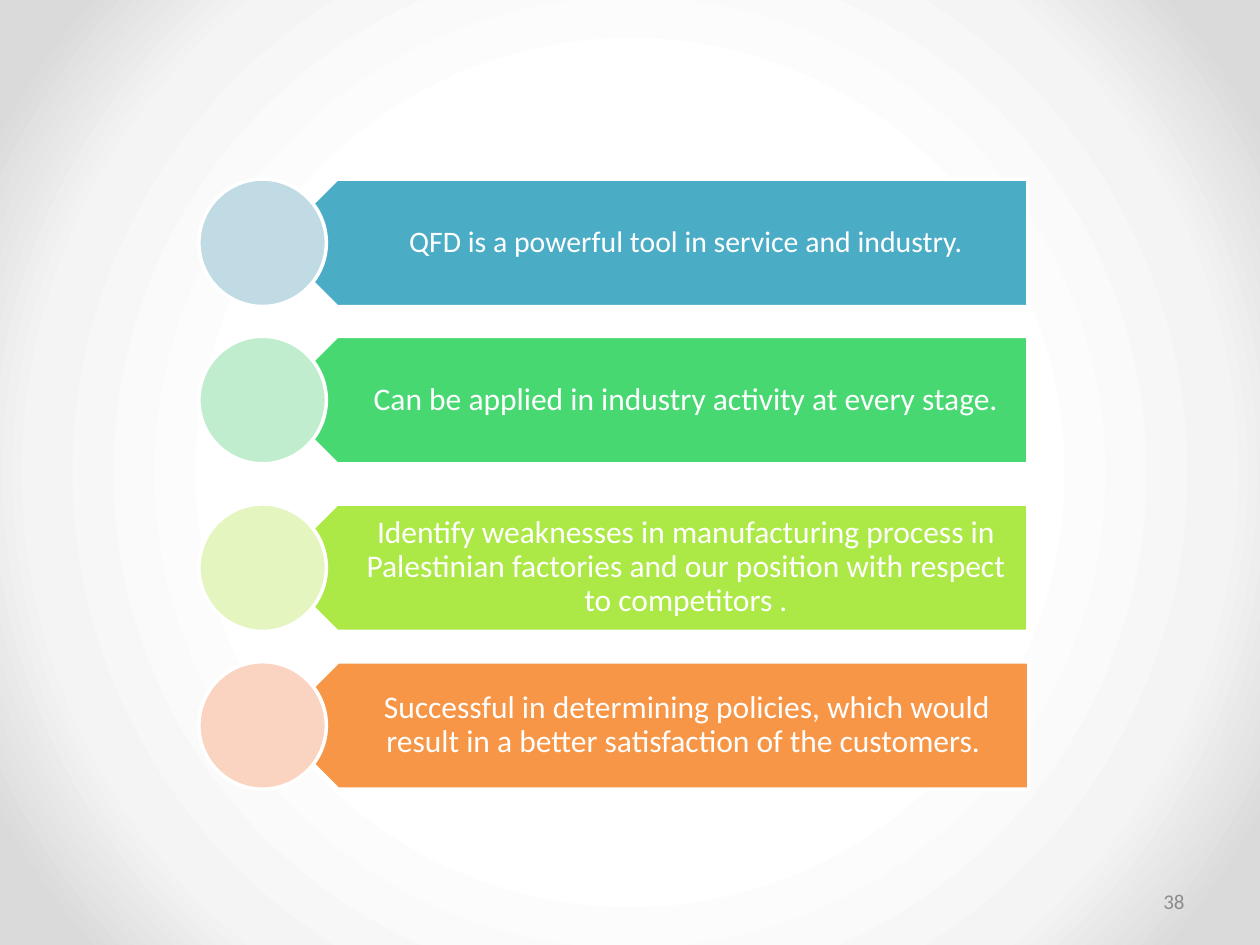
from lxml import etree
from pptx import Presentation
from pptx.dml.color import RGBColor
from pptx.enum.shapes import MSO_SHAPE as Shape
from pptx.enum.text import MSO_ANCHOR as Anchor, PP_ALIGN as Align
from pptx.oxml import parse_xml
from pptx.oxml.ns import nsdecls
from pptx.util import Cm, Pt

BAR_HEIGHT = 2.57
CIRCLE_LEFT, BAR_LEFT, BAR_WIDTH = 4.01, 5.51, 15.21
LABEL_OFFSET = 0.64

# top, left shift, bar colour, circle colour, text size, text
POINTS = [
    (3.61, 0, "4BACC6", "C1DBE5", 17,
     "QFD is a powerful tool in service and industry."),
    (6.78, 0, "47D872", "C0EDCE", 18,
     "Can be applied in industry activity at every stage."),
    (10.16, 0, "ACE946", "E4F5C0", 18,
     "Identify weaknesses in manufacturing process in Palestinian factories "
     "and our position with respect to competitors ."),
    (13.34, 0.02, "F79646", "FBD3C1", 18,
     "Successful in determining policies, which would result in a better "
     "satisfaction of the customers. "),
]


def color(hex_code):
    return RGBColor.from_string(hex_code)


def set_background(slide, stops):
    """Radial gradient spreading from the centre of the slide."""
    slide.background.fill.gradient()
    gradient = slide.element.xpath(".//p:bg//a:gradFill")[0]
    stop_xml = "".join(
        f'<a:gs pos="{percent * 1000}"><a:srgbClr val="{hex_code}"/></a:gs>'
        for percent, hex_code in stops)
    radial = parse_xml(
        f'<a:gradFill {nsdecls("a")} rotWithShape="1"><a:gsLst>{stop_xml}</a:gsLst>'
        '<a:path path="circle"><a:fillToRect l="50000" t="50000" r="50000" b="50000"/>'
        '</a:path></a:gradFill>')
    gradient.getparent().replace(gradient, radial)
    etree.cleanup_namespaces(radial)


def add_outlined(shapes, kind, left, top, width, height, fill):
    shape = shapes.add_shape(kind, Cm(left), Cm(top), Cm(width), Cm(height))
    shape.shadow.inherit = False
    shape.fill.solid()
    shape.fill.fore_color.rgb = color(fill)
    shape.line.color.rgb = color("FFFFFF")
    shape.line.width = Pt(2)
    return shape


def add_text(shapes, text, left, top, width, height, *, size, hex_code="FFFFFF",
             align=Align.CENTER, spacing=None, insets=(0.25, 0.13, 0.25, 0.13)):
    box = shapes.add_textbox(Cm(left), Cm(top), Cm(width), Cm(height))
    frame = box.text_frame
    frame.word_wrap = True
    frame.vertical_anchor = Anchor.MIDDLE
    (frame.margin_left, frame.margin_top,
     frame.margin_right, frame.margin_bottom) = map(Cm, insets)
    paragraph = frame.paragraphs[0]
    paragraph.alignment = align
    paragraph.line_spacing = spacing
    run = paragraph.add_run()
    run.text = text
    run.font.name = "Calibri"
    run.font.size = Pt(size)
    run.font.color.rgb = color(hex_code)


def add_point(slide, top, shift, bar_color, circle_color, size, text):
    """Left-pointing bar with its label, and a circle over the tip."""
    left = BAR_LEFT + shift
    row = slide.shapes.add_group_shape().shapes
    bar = add_outlined(row, Shape.PENTAGON, left, top, BAR_WIDTH, BAR_HEIGHT, bar_color)
    bar.rotation = 180
    add_text(row, text, left + LABEL_OFFSET, top, BAR_WIDTH - LABEL_OFFSET, BAR_HEIGHT,
             size=size, spacing=0.9, insets=(1.14, 0.18, 0.35, 0.18))
    add_outlined(slide.shapes, Shape.OVAL, CIRCLE_LEFT, top,
                 BAR_HEIGHT, BAR_HEIGHT, circle_color)


def main():
    deck = Presentation()
    deck.slide_width, deck.slide_height = Cm(25.4), Cm(19.05)
    slide = deck.slides.add_slide(deck.slide_layouts[6])
    set_background(slide, [(50, "FFFFFF"), (76, "F4F4F4"), (92, "DADADA")])

    # Conclusions
    for point in POINTS:
        add_point(slide, *point)

    # Slide number
    add_text(slide.shapes, "38", 18.2, 17.66, 5.93, 1.01,
             size=12, hex_code="8C8C8C", align=Align.RIGHT)
    deck.save("out.pptx")


if __name__ == "__main__":
    main()
